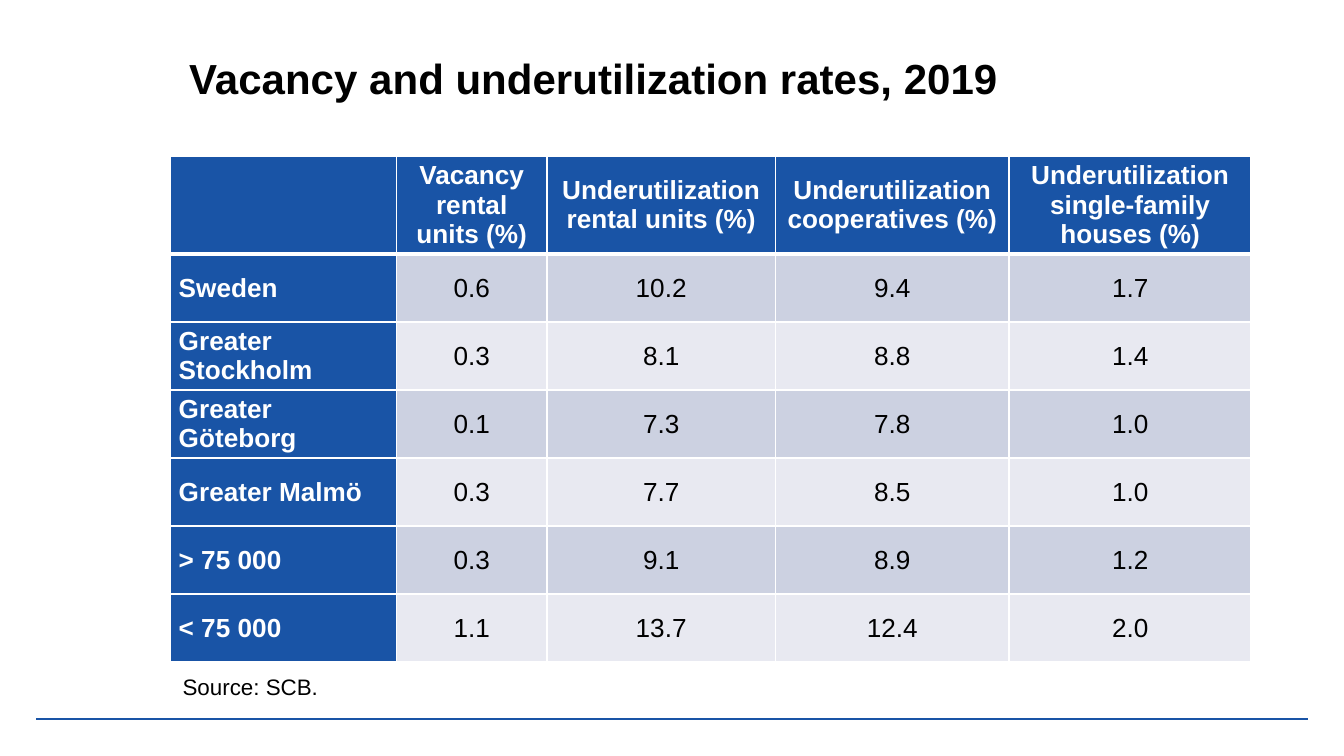
from lxml import etree
from pptx import Presentation
from pptx.dml.color import RGBColor
from pptx.enum import shapes, text
from pptx.oxml import ns
from pptx.util import Inches, Pt

BLUE = RGBColor(0x19, 0x54, 0xA6)
BAND_DARK = RGBColor(0xCC, 0xD1, 0xE1)
BAND_LIGHT = RGBColor(0xE8, 0xE9, 0xF1)
WHITE = RGBColor(0xFF, 0xFF, 0xFF)
BLACK = RGBColor(0, 0, 0)
FONT = "Arial"

COLUMN_WIDTHS = [1.68, 1.12, 1.7, 1.74, 1.8]
HEADER_HEIGHT = 0.73
ROWS = [
    ["", "Vacancy\nrental units (%)", "Underutilization\nrental units (%)",
     "Underutilization cooperatives (%)",
     "Underutilization\nsingle-family houses (%)"],
    ["Sweden", "0.6", "10.2", "9.4", "1.7"],
    ["Greater Stockholm", "0.3", "8.1", "8.8", "1.4"],
    ["Greater Göteborg", "0.1", "7.3", "7.8", "1.0"],
    ["Greater Malmö", "0.3", "7.7", "8.5", "1.0"],
    ["> 75 000", "0.3", "9.1", "8.9", "1.2"],
    ["< 75 000", "1.1", "13.7", "12.4", "2.0"],
]


def style_font(font, size, color, bold=False):
    font.name = FONT
    font.size = Pt(size)
    font.bold = bold
    font.color.rgb = color


def place_title(slide, left, top, width, height):
    title = slide.shapes.title
    title.left, title.top = Inches(left), Inches(top)
    title.width, title.height = Inches(width), Inches(height)
    frame = title.text_frame
    frame.text = "Vacancy and underutilization rates, 2019"
    frame.vertical_anchor = text.MSO_ANCHOR.TOP
    frame.auto_size = text.MSO_AUTO_SIZE.NONE
    paragraph = frame.paragraphs[0]
    paragraph.alignment = text.PP_ALIGN.CENTER
    paragraph.line_spacing = Pt(30)
    style_font(paragraph.font, 22.5, BLACK, True)


def add_borders(cell, is_below_header, is_header):
    properties = cell._tc.get_or_add_tcPr()
    widths = {"L": 1, "R": 1,
              "T": 3 if is_below_header else 1,
              "B": 3 if is_header else 1}
    for side, width in widths.items():
        line = etree.SubElement(properties, ns.qn(f"a:ln{side}"), w=str(Pt(width)))
        fill = etree.SubElement(line, ns.qn("a:solidFill"))
        etree.SubElement(fill, ns.qn("a:srgbClr"), val=str(WHITE))


def fill_cell(cell, content, row, column):
    is_heading = row == 0 or column == 0
    add_borders(cell, row == 1, row == 0)
    cell.fill.solid()
    band = BAND_DARK if row % 2 else BAND_LIGHT
    cell.fill.fore_color.rgb = BLUE if is_heading else band
    cell.vertical_anchor = text.MSO_ANCHOR.MIDDLE
    cell.margin_left = cell.margin_right = Inches(0.06)
    cell.margin_top = cell.margin_bottom = 0
    cell.text_frame.text = content
    for paragraph in cell.text_frame.paragraphs:
        paragraph.alignment = text.PP_ALIGN.CENTER if column else text.PP_ALIGN.LEFT
        style_font(paragraph.font, 14, WHITE if is_heading else BLACK, is_heading)


def add_rates_table(slide, left, top, width, height):
    table = slide.shapes.add_table(
        len(ROWS), len(COLUMN_WIDTHS),
        Inches(left), Inches(top), Inches(width), Inches(height)).table
    table.first_col = True
    for column, column_width in zip(table.columns, COLUMN_WIDTHS):
        column.width = Inches(column_width)
    body_height = (height - HEADER_HEIGHT) / (len(ROWS) - 1)
    for index, row in enumerate(table.rows):
        row.height = Inches(body_height if index else HEADER_HEIGHT)
    for row, contents in enumerate(ROWS):
        for column, content in enumerate(contents):
            fill_cell(table.cell(row, column), content, row, column)


def add_source(slide, left, top, width, height):
    box = slide.shapes.add_textbox(
        Inches(left), Inches(top), Inches(width), Inches(height))
    frame = box.text_frame
    frame.word_wrap = True
    frame.auto_size = text.MSO_AUTO_SIZE.SHAPE_TO_FIT_TEXT
    frame.text = "Source: SCB."
    style_font(frame.paragraphs[0].font, 12, BLACK)


def add_footer_line(slide, left, top, width):
    line = slide.shapes.add_connector(
        shapes.MSO_CONNECTOR.STRAIGHT,
        Inches(left), Inches(top), Inches(left + width), Inches(top))
    line.line.color.rgb = BLUE
    line.line.width = Pt(1)
    etree.SubElement(line._element.spPr, ns.qn("a:effectLst"))


def main():
    presentation = Presentation()
    presentation.slide_width = Inches(10)
    presentation.slide_height = presentation.slide_width * 9 // 16
    slide = presentation.slides.add_slide(presentation.slide_layouts[5])
    add_footer_line(slide, 0.27, 5.35, 9.46)
    place_title(slide, 1.04, 0.3, 6.76, 0.89)
    add_rates_table(slide, 1.27, 1.16, 8.05, 3.77)
    add_source(slide, 1.26, 4.96, 2.05, 0.3)
    presentation.save("out.pptx")


if __name__ == "__main__":
    main()
